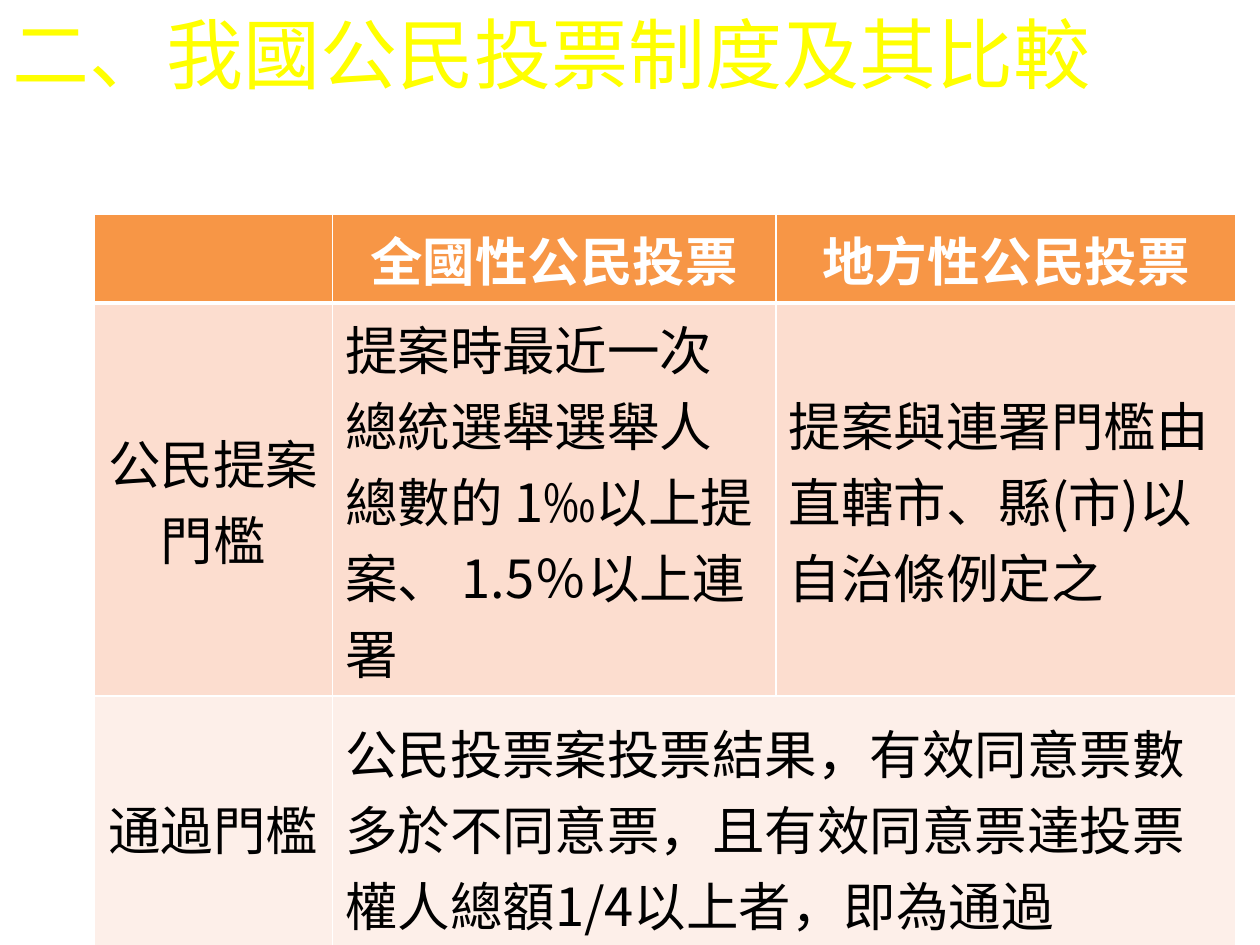
from lxml import etree
from pptx import Presentation
from pptx.dml.color import RGBColor
from pptx.enum.text import MSO_ANCHOR, PP_ALIGN
from pptx.oxml.ns import qn
from pptx.util import Pt

LEFT = PP_ALIGN.LEFT
CENTER = PP_ALIGN.CENTER
MIDDLE = MSO_ANCHOR.MIDDLE

YELLOW = RGBColor(0xFF, 0xFF, 0x00)
WHITE = RGBColor(0xFF, 0xFF, 0xFF)
BLACK = RGBColor(0x00, 0x00, 0x00)
ORANGE = RGBColor(0xF7, 0x96, 0x46)
PEACH = RGBColor(0xFC, 0xDD, 0xCF)
PALE_PEACH = RGBColor(0xFD, 0xEF, 0xE9)

TITLE_FONT = "Calibri"
TABLE_FONT = "Noto Sans CJK SC"

COLUMN_WIDTHS = (136, 253.5, 262.8)
ROW_HEIGHTS = (43.2, 187.2, 151.2)
ROW_FILLS = (ORANGE, PEACH, PALE_PEACH)
ROWS = (
    ("", "全國性公民投票", "地方性公民投票"),
    (
        "公民提案門檻",
        "提案時最近一次總統選舉選舉人總數的 1‰以上提案、 1.5％以上連署",
        "提案與連署門檻由直轄市、縣(市)以自治條例定之",
    ),
    (
        "通過門檻",
        "公民投票案投票結果，有效同意票數多於不同意票，"
        "且有效同意票達投票權人總額1/4以上者，即為通過",
        "",
    ),
)


class SlideBuilder:
    def __init__(self, slide):
        self.slide = slide

    def add_text(self, text_frame, text, font_name, size, color, bold, alignment):
        paragraph = text_frame.paragraphs[0]
        paragraph.alignment = alignment
        run = paragraph.add_run()
        run.text = text
        font = run.font
        font.name = font_name
        font.size = Pt(size)
        font.bold = bold
        font.color.rgb = color
        properties = run._r.get_or_add_rPr()
        etree.SubElement(properties, qn("a:ea"), typeface=font_name)

    def title(self, text, left, top, width, height):
        shape = self.slide.shapes.title
        shape.left, shape.top = Pt(left), Pt(top)
        shape.width, shape.height = Pt(width), Pt(height)
        shape.text_frame.vertical_anchor = MIDDLE
        self.add_text(shape.text_frame, text, TITLE_FONT, 44, YELLOW, False, LEFT)

    def borders(self, cell, bottom_width):
        properties = cell._tc.get_or_add_tcPr()
        widths = {"a:lnL": 1, "a:lnR": 1, "a:lnT": 1, "a:lnB": bottom_width}
        for tag, width in widths.items():
            line = etree.SubElement(properties, qn(tag), w=str(Pt(width)))
            fill = etree.SubElement(line, qn("a:solidFill"))
            etree.SubElement(fill, qn("a:srgbClr"), val=str(WHITE))

    def cell(self, cell, text, fill, is_header, alignment):
        cell.vertical_anchor = MIDDLE
        self.borders(cell, 3 if is_header else 1)
        cell.fill.solid()
        cell.fill.fore_color.rgb = fill
        if text:
            color = WHITE if is_header else BLACK
            self.add_text(cell.text_frame, text, TABLE_FONT, 30, color, is_header, alignment)

    def table(self, left, top):
        table = self.slide.shapes.add_table(
            len(ROWS), len(COLUMN_WIDTHS), Pt(left), Pt(top),
            Pt(sum(COLUMN_WIDTHS)), Pt(sum(ROW_HEIGHTS)),
        ).table
        for column, width in zip(table.columns, COLUMN_WIDTHS):
            column.width = Pt(width)
        for row, height in zip(table.rows, ROW_HEIGHTS):
            row.height = Pt(height)
        for row_index, (texts, fill) in enumerate(zip(ROWS, ROW_FILLS)):
            is_header = row_index == 0
            for column_index, text in enumerate(texts):
                alignment = CENTER if is_header or column_index == 0 else LEFT
                self.cell(table.cell(row_index, column_index), text, fill, is_header, alignment)
        table.cell(2, 1).merge(table.cell(2, 2))


def main():
    presentation = Presentation()
    presentation.slide_width = Pt(720)
    presentation.slide_height = Pt(540)
    builder = SlideBuilder(presentation.slides.add_slide(presentation.slide_layouts[5]))
    builder.title("二、我國公民投票制度及其比較", 0, 0, 648, 60.5)
    builder.table(54, 122.4)
    presentation.save("out.pptx")


if __name__ == "__main__":
    main()
